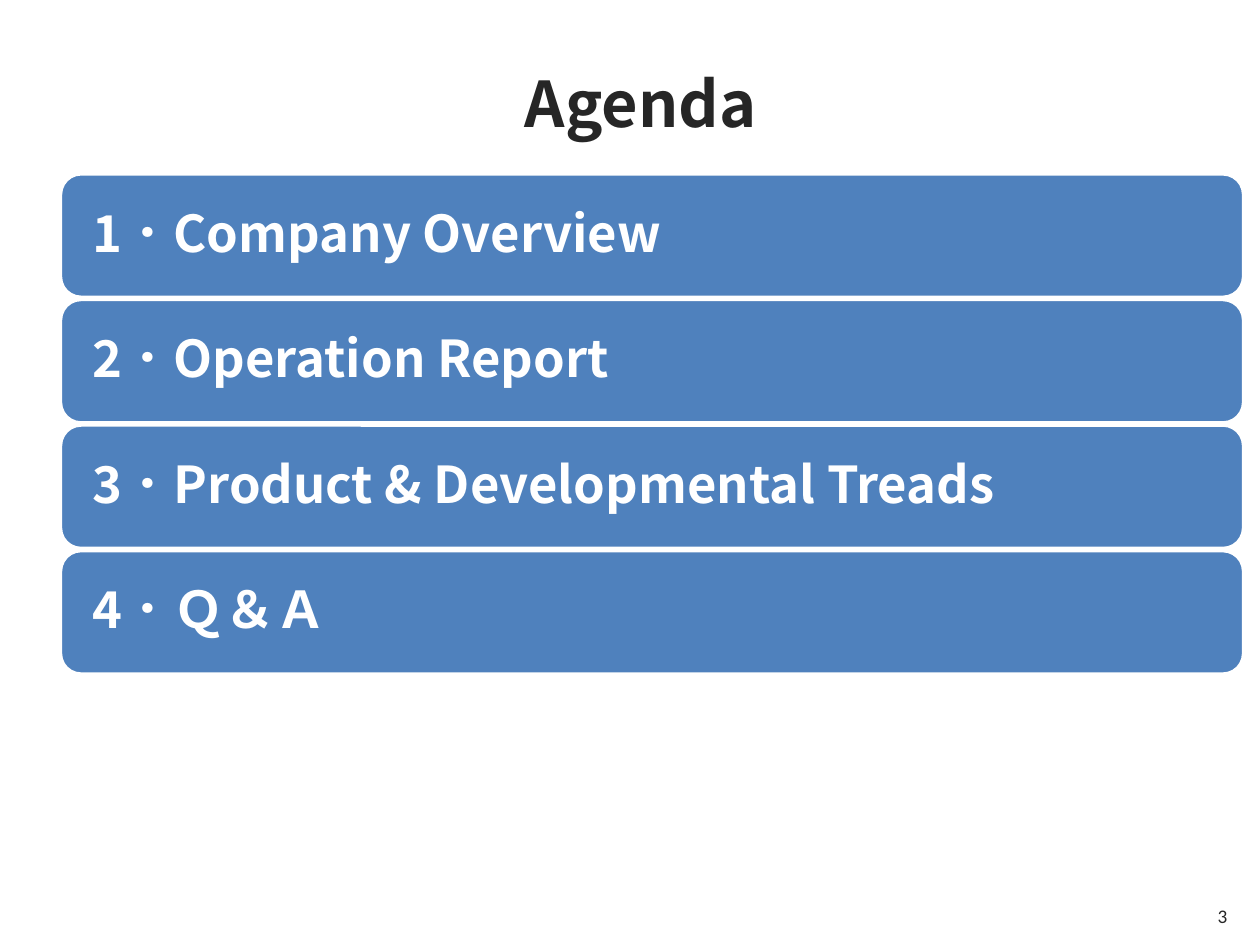
from dataclasses import dataclass

from lxml.etree import SubElement
from pptx import Presentation
from pptx.dml.color import RGBColor
from pptx.enum.lang import MSO_LANGUAGE_ID
from pptx.enum.shapes import MSO_SHAPE
from pptx.enum.text import MSO_ANCHOR, MSO_AUTO_SIZE, PP_ALIGN
from pptx.oxml.ns import qn
from pptx.util import Inches, Pt

FIRST_TOP, LAST_TOP = 1.38, 4.37


@dataclass
class AgendaItem:
    number: int
    topic: str

    @property
    def label(self) -> str:
        return f"{self.number}．{self.topic}"


ITEMS = [
    AgendaItem(1, "Company Overview"),
    AgendaItem(2, "Operation Report"),
    AgendaItem(3, "Product & Developmental Treads"),
    AgendaItem(4, "Ｑ＆Ａ"),
]


def rgb(value: str) -> RGBColor:
    return RGBColor.from_string(value)


def write(sp, text: str, *, font: str, size: float, color: str,
          bold: bool = False, align=PP_ALIGN.LEFT, language=None,
          line_spacing: float = 1.0):
    tf = sp.text_frame
    tf.word_wrap = True
    tf.auto_size = MSO_AUTO_SIZE.NONE
    tf.vertical_anchor = MSO_ANCHOR.MIDDLE
    p = tf.paragraphs[0]
    p.alignment = align
    p.line_spacing = line_spacing
    r = p.add_run()
    r.text = text
    r.font.name = font
    r.font.size = Pt(size)
    r.font.bold = bold
    r.font.color.rgb = rgb(color)
    if language:
        r.font.language_id = language
    SubElement(r.font._element, qn("a:ea")).set("typeface", font)
    return tf


def add_item(s, item: AgendaItem, top: float) -> None:
    sp = s.shapes.add_shape(MSO_SHAPE.ROUNDED_RECTANGLE, Inches(0.48),
                            Inches(top), Inches(9.39), Inches(0.98))
    sp.shadow.inherit = False
    sp.fill.solid()
    sp.fill.fore_color.rgb = rgb("4F81BD")
    sp.line.color.rgb = rgb("FFFFFF")
    sp.line.width = Pt(2)
    tf = write(sp, item.label, font="Noto Sans CJK SC", size=29,
               color="FFFFFF", bold=True, line_spacing=0.9,
               language=MSO_LANGUAGE_ID.TRADITIONAL_CHINESE)
    tf.margin_left = Inches(0.21)
    tf.margin_right = tf.margin_top = tf.margin_bottom = Inches(0.12)


def main() -> None:
    prs = Presentation()
    prs.slide_width, prs.slide_height = Inches(10), Inches(7.5)
    s = prs.slides.add_slide(prs.slide_layouts[5])

    title = s.shapes.title
    title.left, title.top = Inches(0.39), Inches(0.53)
    title.width, title.height = Inches(9.39), Inches(0.57)
    write(title, "Agenda", font="Noto Sans CJK JP", size=36,
          color="262626", bold=True, align=PP_ALIGN.CENTER)

    pitch = (LAST_TOP - FIRST_TOP) / (len(ITEMS) - 1)
    for i, item in enumerate(ITEMS):
        add_item(s, item, FIRST_TOP + i * pitch)

    page_number = s.shapes.add_textbox(Inches(7.51), Inches(7.07),
                                       Inches(2.33), Inches(0.4))
    write(page_number, "3", font="Calibri", size=11, color="262626",
          align=PP_ALIGN.RIGHT)

    prs.save("out.pptx")


if __name__ == "__main__":
    main()
